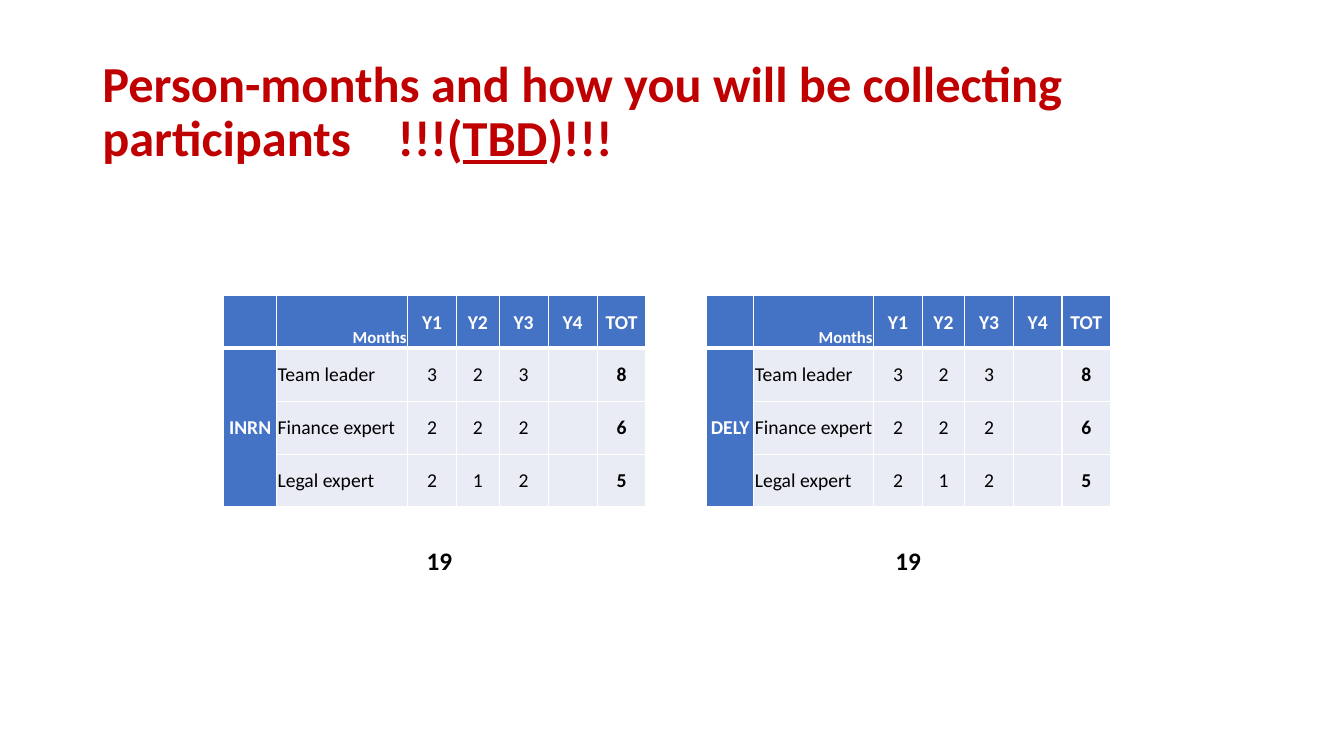
import collections
import dataclasses

import lxml.etree
import pptx
import pptx.dml.color
import pptx.enum.text
import pptx.oxml.ns
import pptx.util

Pt = pptx.util.Pt
Align = pptx.enum.text.PP_ALIGN
Anchor = pptx.enum.text.MSO_ANCHOR
Box = collections.namedtuple("Box", "left top width height")
Team = collections.namedtuple("Team", "name left columns total_offset")


@dataclasses.dataclass(frozen=True)
class Theme:
    """Colours, font and type sizes of the slide."""
    font: str = "Calibri"
    title: str = "C00000"
    ink: str = "000000"
    white: str = "FFFFFF"
    header: str = "4472C4"
    body: str = "E9EBF5"
    title_size: int = 36
    total_size: int = 18
    cell_size: int = 14
    small_size: int = 12


THEME = Theme()
YEARS = ["Y1", "Y2", "Y3", "Y4"]
ROLES = {
    "Team leader": [3, 2, 3, None],
    "Finance expert": [2, 2, 2, None],
    "Legal expert": [2, 1, 2, None],
}
TEAMS = [
    Team("INRN", 159.8, [37.8, 93.6, 35, 30.4, 35, 35, 35], 108.8),
    Team("DELY", 504.7, [33.8, 85.6, 34.7, 30.4, 34.7, 34.7, 34.7], 98.7),
]


def add_text(para, text, size=THEME.cell_size, color=THEME.ink, bold=False,
             underline=None, align=None):
    """Append a formatted span to a paragraph."""
    if align is not None:
        para.alignment = align
    span = para.add_run()
    span.text = text
    span.font.name = THEME.font
    span.font.size = Pt(size)
    span.font.bold = bold
    span.font.underline = underline
    span.font.color.rgb = pptx.dml.color.RGBColor.from_string(color)


def add_box(page, box, anchor=Anchor.TOP):
    """Add a wrapping text box and return its first paragraph."""
    frame = page.shapes.add_textbox(*map(Pt, box)).text_frame
    frame.word_wrap = True
    frame.vertical_anchor = anchor
    return frame.paragraphs[0]


def add_title(page, box):
    """Place the title, with a tab stop before its closing remark."""
    para = add_box(page, box, Anchor.MIDDLE)
    para.line_spacing = 0.9
    qn = pptx.oxml.ns.qn
    stops = lxml.etree.SubElement(para._p.get_or_add_pPr(), qn("a:tabLst"))
    lxml.etree.SubElement(stops, qn("a:tab"), pos=str(Pt(211)), algn="l")
    for text, underline in [
        ("Person-months and how you will be collecting participants\t!!!(", None),
        ("TBD", True),
        (")!!!", None),
    ]:
        add_text(para, text, size=THEME.title_size, color=THEME.title,
                 bold=True, underline=underline)


def style_cell(cell, fill, top=1, bottom=1):
    """Set the margins, white borders and fill of a cell."""
    cell.margin_left = cell.margin_right = cell.margin_top = Pt(0.7)
    cell.margin_bottom = 0
    cell.vertical_anchor = Anchor.MIDDLE
    qn = pptx.oxml.ns.qn
    properties = cell._tc.get_or_add_tcPr()
    for side, width in zip("LRTB", (1, 1, top, bottom)):
        line = lxml.etree.SubElement(properties, qn(f"a:ln{side}"), w=str(Pt(width)))
        solid = lxml.etree.SubElement(line, qn("a:solidFill"))
        lxml.etree.SubElement(solid, qn("a:srgbClr"), val=THEME.white)
    cell.fill.solid()
    cell.fill.fore_color.rgb = pptx.dml.color.RGBColor.from_string(fill)


def add_effort_table(page, box, team):
    """Place the table of person-months of one team."""
    rows = [["", "Months", *YEARS, "TOT"]]
    for role, months in ROLES.items():
        rows.append(["", role, *months, sum(filter(None, months))])
    rows[1][0] = team.name
    table = page.shapes.add_table(len(rows), len(rows[0]), *map(Pt, box)).table
    table.first_row = table.horz_banding = False
    for column, width in zip(table.columns, team.columns):
        column.width = Pt(width)
    for r, values in enumerate(rows):
        for c, value in enumerate(values):
            cell = table.cell(r, c)
            heading = r == 0 or c == 0
            style_cell(cell, THEME.header if heading else THEME.body,
                       top=3 if r == 1 else 1, bottom=3 if r == 0 else 1)
            if value in ("", None):
                continue
            corner = (r, c) == (0, 1)
            if corner:
                cell.vertical_anchor = Anchor.BOTTOM
            align = Align.RIGHT if corner else Align.LEFT if c == 1 else Align.CENTER
            add_text(cell.text_frame.paragraphs[0], str(value), align=align,
                     size=THEME.small_size if corner else THEME.cell_size,
                     color=THEME.white if heading else THEME.ink,
                     bold=heading or c == len(values) - 1)
    name_cell = table.cell(1, 0)
    name_cell.merge(table.cell(len(rows) - 1, 0))
    name_cell._tc.get_or_add_tcPr().set("vert", "wordArtVert")


def add_team(page, box, team):
    """Place a team's table and the grand total below it."""
    add_effort_table(page, box, team)
    total = sum(sum(filter(None, months)) for months in ROLES.values())
    para = add_box(page, Box(box.left + team.total_offset, box.top + 175, 90.7, 29))
    add_text(para, str(total), size=THEME.total_size, bold=True, align=Align.CENTER)


def main():
    """Build the deck and save it."""
    deck = pptx.Presentation()
    deck.slide_width, deck.slide_height = Pt(960), Pt(540)
    page = deck.slides.add_slide(deck.slide_layouts[6])
    add_title(page, Box(66, 28.8, 828, 104.4))
    for team in TEAMS:
        add_team(page, Box(team.left, 211, sum(team.columns), 151.2), team)
    deck.save("out.pptx")


if __name__ == "__main__":
    main()
